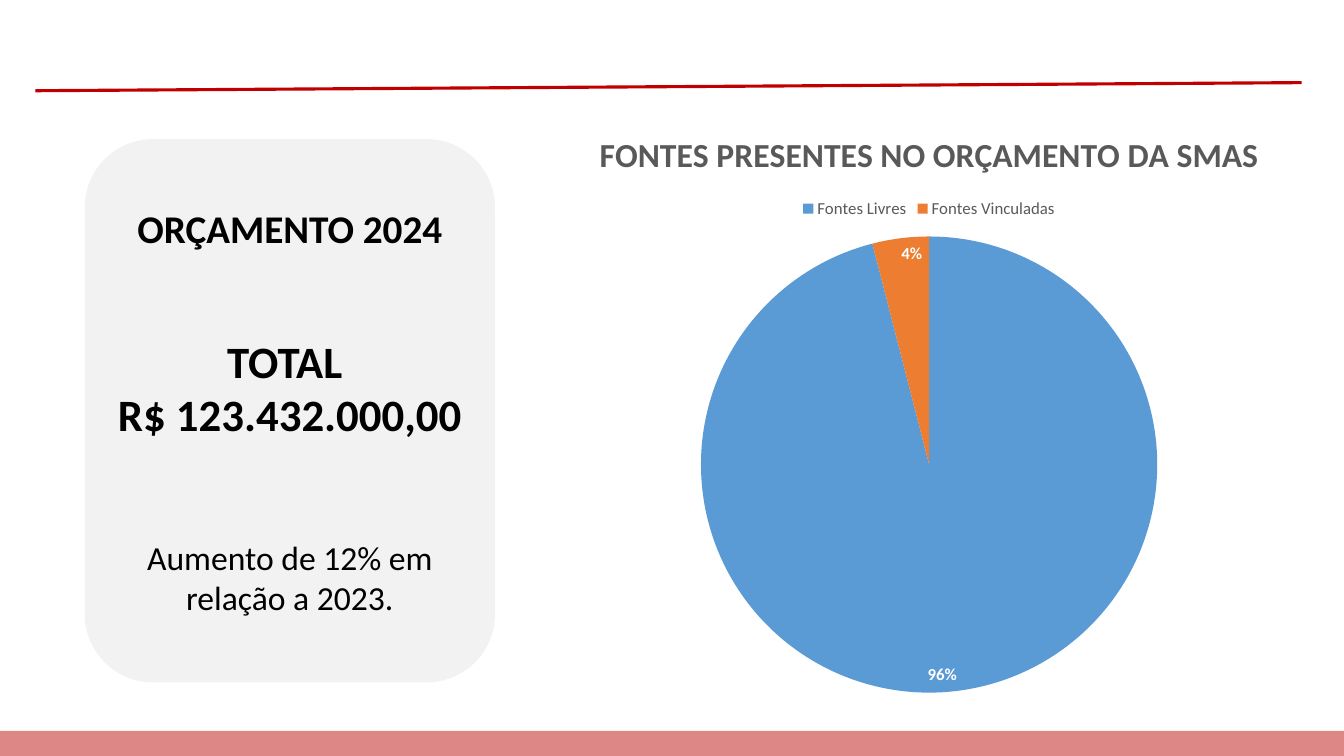
from lxml import etree
from pptx import Presentation
from pptx.chart.data import CategoryChartData
from pptx.dml.color import RGBColor
from pptx.enum.chart import XL_CHART_TYPE, XL_LABEL_POSITION, XL_LEGEND_POSITION
from pptx.enum.shapes import MSO_CONNECTOR, MSO_SHAPE
from pptx.enum.text import MSO_ANCHOR, PP_ALIGN
from pptx.oxml.ns import qn
from pptx.util import Inches, Pt

PIE = XL_CHART_TYPE.PIE
LEGEND_TOP = XL_LEGEND_POSITION.TOP
INSIDE_END = XL_LABEL_POSITION.INSIDE_END
STRAIGHT = MSO_CONNECTOR.STRAIGHT
RECTANGLE = MSO_SHAPE.RECTANGLE
ROUNDED = MSO_SHAPE.ROUNDED_RECTANGLE
MIDDLE = MSO_ANCHOR.MIDDLE
CENTER = PP_ALIGN.CENTER

FONT = "Calibri"
BLACK = RGBColor(0x00, 0x00, 0x00)
WHITE = RGBColor(0xFF, 0xFF, 0xFF)
GREY_TEXT = RGBColor(0x59, 0x59, 0x59)
PANEL_GREY = RGBColor(0xF2, 0xF2, 0xF2)
RULE_RED = RGBColor(0xC0, 0x00, 0x00)
FOOTER_RED = RGBColor(0xBA, 0x00, 0x00)
BLUE = RGBColor(0x5B, 0x9B, 0xD5)
ORANGE = RGBColor(0xED, 0x7D, 0x31)

# Text, size, bold, space before in points
BUDGET_LINES = [
    ("ORÇAMENTO 2024", 28, True, 0),
    ("TOTAL ", 32, True, 58.5),
    ("R$ 123.432.000,00", 32, True, 0),
    ("Aumento de 12% em relação a 2023.", 24, False, 68.5),
]
CHART_TITLE = "FONTES PRESENTES NO ORÇAMENTO DA SMAS"
# Source of funds, share in percent, slice colour
FUNDS = [("Fontes Livres", 96, BLUE), ("Fontes Vinculadas", 4, ORANGE)]


def style_font(font, size, color, bold=False):
    font.name = FONT
    font.size = Pt(size)
    font.bold = bold
    font.color.rgb = color


def add_rule(page, x1, y1, x2, y2):
    rule = page.shapes.add_connector(
        STRAIGHT, Inches(x1), Inches(y1), Inches(x2), Inches(y2))
    rule.line.color.rgb = RULE_RED
    rule.line.width = Pt(2.25)
    etree.SubElement(rule._element.spPr, qn("a:effectLst"))


def add_block(page, kind, left, top, width, height, color, opacity=100):
    block = page.shapes.add_shape(
        kind, Inches(left), Inches(top), Inches(width), Inches(height))
    block.shadow.inherit = False
    block.fill.solid()
    block.fill.fore_color.rgb = color
    block.line.fill.background()
    if opacity < 100:
        tint = block._element.spPr.find(".//" + qn("a:srgbClr"))
        etree.SubElement(tint, qn("a:alpha"), val=str(opacity * 1000))
    return block


def write_lines(box, lines):
    frame = box.text_frame
    frame.word_wrap = True
    frame.vertical_anchor = MIDDLE
    frame.text = "\n".join(line[0] for line in lines)
    for para, (_, size, bold, gap) in zip(frame.paragraphs, lines):
        para.alignment = CENTER
        para.space_before = Pt(gap)
        style_font(para.runs[0].font, size, BLACK, bold)


def add_fund_pie(page, left, top, width, height):
    data = CategoryChartData()
    data.categories = [name for name, _, _ in FUNDS]
    data.add_series(CHART_TITLE, [share for _, share, _ in FUNDS])
    chart = page.shapes.add_chart(
        PIE, Inches(left), Inches(top), Inches(width), Inches(height), data).chart
    style_font(chart.font, 10, BLACK)

    # Title and legend
    chart.has_title = True
    para = chart.chart_title.text_frame.paragraphs[0]
    para.text = CHART_TITLE
    style_font(para.runs[0].font, 24, GREY_TEXT, True)
    chart.chart_title.include_in_layout = False
    chart.has_legend = True
    chart.legend.position = LEGEND_TOP
    chart.legend.include_in_layout = False
    style_font(chart.legend.font, 12, GREY_TEXT)

    # Slices and percentages
    plot = chart.plots[0]
    plot.vary_by_categories = True
    series = plot.series[0]
    for index, (_, _, color) in enumerate(FUNDS):
        fill = series.points[index].format.fill
        fill.solid()
        fill.fore_color.rgb = color
    labels = series.data_labels
    labels.show_percentage = True
    labels.show_value = False
    labels.number_format = "0%"
    labels.number_format_is_linked = False
    labels.position = INSIDE_END
    style_font(labels.font, 12, WHITE, True)


def main():
    deck = Presentation()
    deck.slide_width = Inches(13.33)
    deck.slide_height = Inches(7.5)
    page = deck.slides.add_slide(deck.slide_layouts[6])

    # Header rule and footer band
    add_rule(page, 0.35, 0.9, 12.91, 0.82)
    add_block(page, RECTANGLE, 0, 7.25, 13.33, 0.25, FOOTER_RED, opacity=47)

    # Budget panel
    panel = add_block(page, ROUNDED, 0.84, 1.38, 4.07, 5.39, PANEL_GREY)
    write_lines(panel, BUDGET_LINES)

    # Share of each source
    add_fund_pie(page, 4.77, 1.08, 8.89, 5.93)

    deck.save("out.pptx")


if __name__ == "__main__":
    main()
